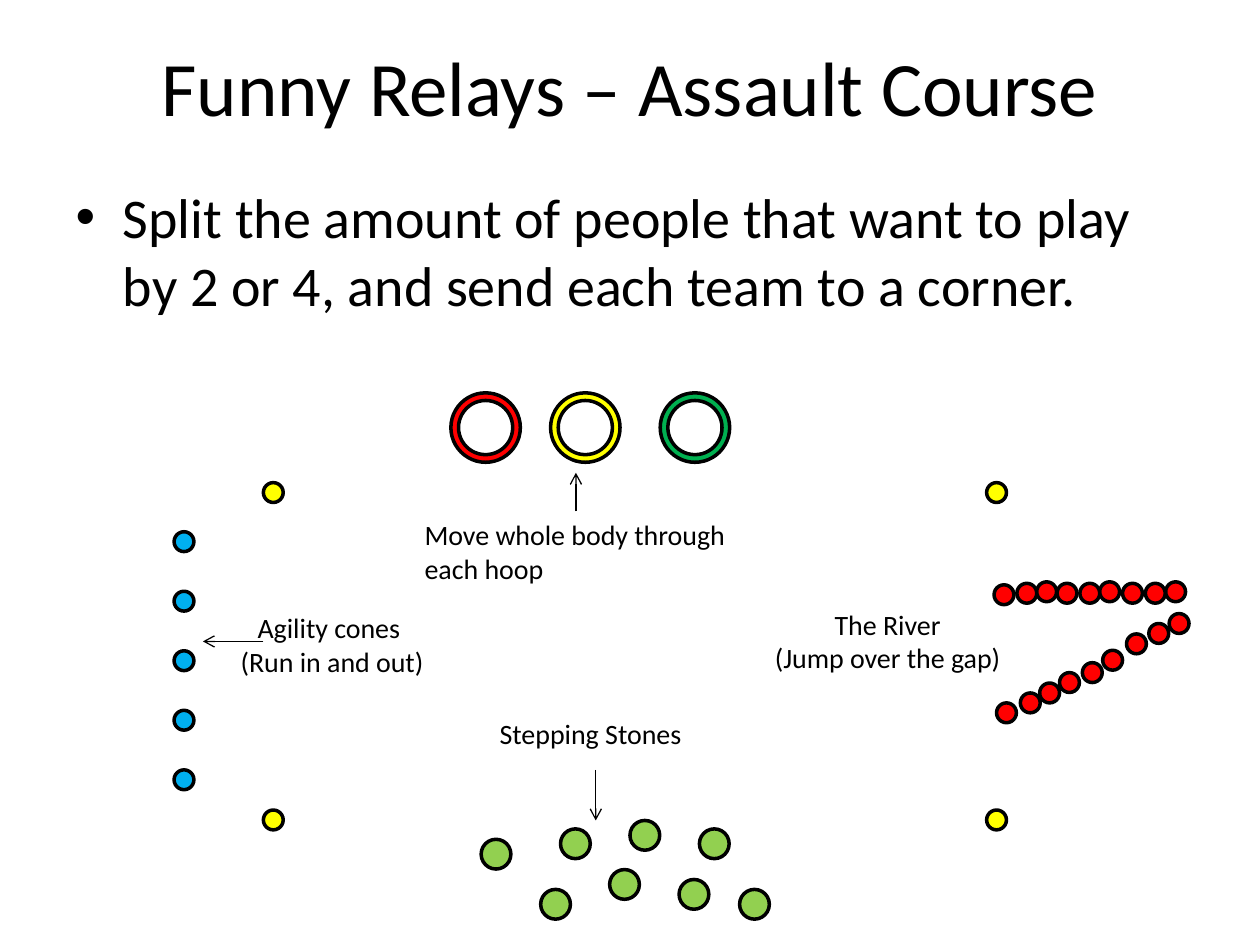
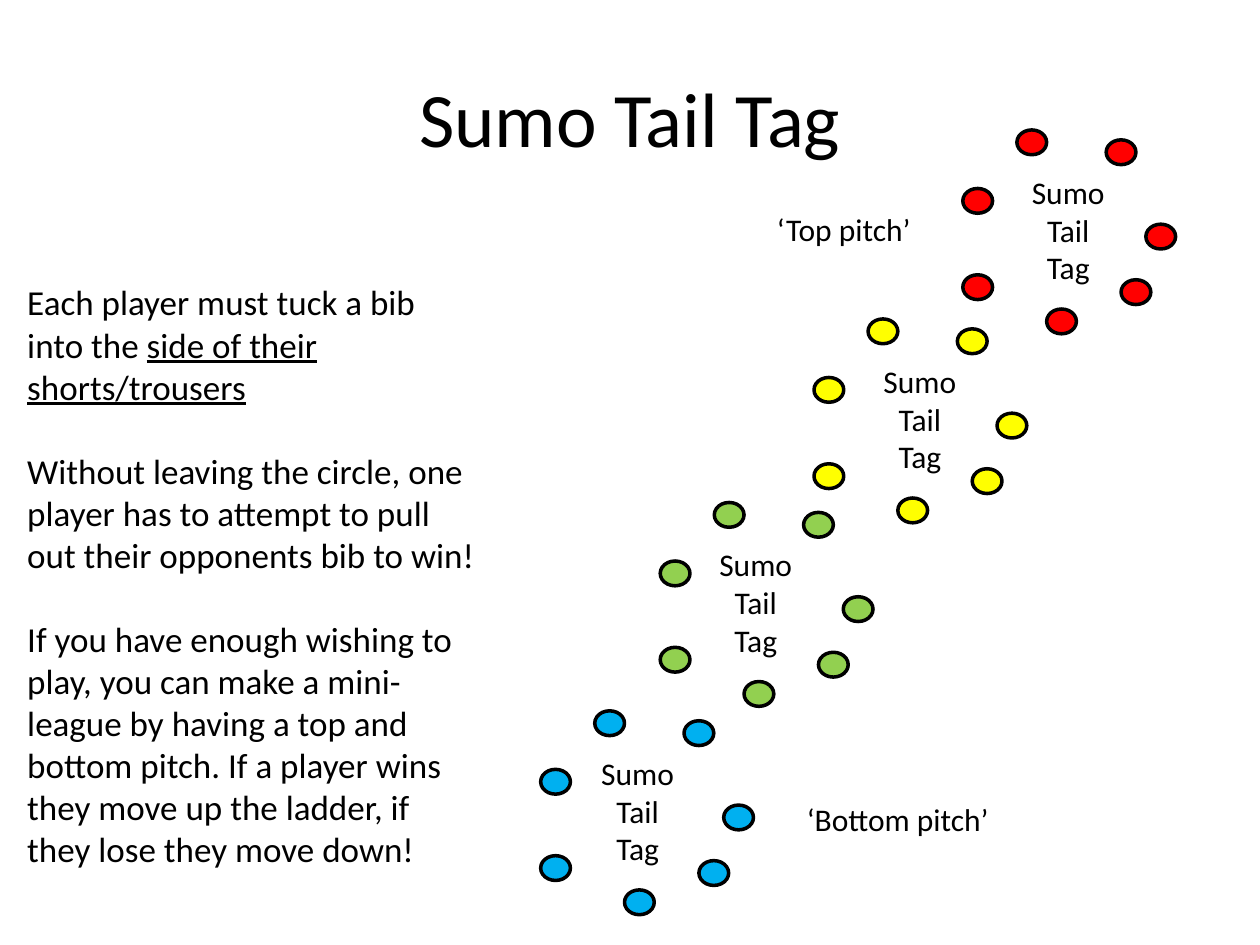
from itertools import product

from lxml import etree
from pptx import Presentation
from pptx.dml.color import RGBColor
from pptx.enum.shapes import MSO_CONNECTOR, MSO_SHAPE
from pptx.enum.text import MSO_ANCHOR, MSO_AUTO_SIZE, PP_ALIGN
from pptx.oxml.ns import qn
from pptx.util import Cm, Pt

BLACK = RGBColor(0x00, 0x00, 0x00)
RED = RGBColor(0xFF, 0x00, 0x00)
YELLOW = RGBColor(0xFF, 0xFF, 0x00)
GREEN = RGBColor(0x00, 0xB0, 0x50)
LIME = RGBColor(0x92, 0xD0, 0x50)
BLUE = RGBColor(0x00, 0xB0, 0xF0)

FONT = "Calibri"
LEFT, CENTER = PP_ALIGN.LEFT, PP_ALIGN.CENTER
OVAL, DONUT = MSO_SHAPE.OVAL, MSO_SHAPE.DONUT
STRAIGHT = MSO_CONNECTOR.STRAIGHT
MIDDLE = MSO_ANCHOR.MIDDLE
GROW = MSO_AUTO_SIZE.SHAPE_TO_FIT_TEXT
TITLE_LAYOUT, CONTENT_LAYOUT = 5, 1

# Assault course: places in cm
COURSE_TITLE = "Funny Relays – Assault Course"
COURSE_INTRO = ("Split the amount of people that want to play by 2 or 4, "
                "and send each team to a corner.")
CONE, STONE, HOOP = 0.4, 0.6, 1.4
CORNERS = list(product((5.31, 19.89), (9.73, 16.33)))
AGILITY_CONES = [(3.51, 10.72 + 1.2 * i) for i in range(5)]
RIVER_TOP = [(20.04, 11.79), (20.5, 11.76), (20.9, 11.73), (21.31, 11.76),
             (21.77, 11.76), (22.17, 11.73), (22.63, 11.76), (23.09, 11.76),
             (23.5, 11.73)]
RIVER_BOTTOM = [(20.09, 14.17), (20.57, 13.97), (20.96, 13.77), (21.36, 13.56),
                (21.82, 13.36), (22.23, 13.11), (22.71, 12.78), (23.16, 12.57),
                (23.57, 12.37)]
HOOPS = [(9.09, RED), (11.1, YELLOW), (13.31, GREEN)]
HOOP_TOP = 7.92
STONES = [(9.7, 16.92), (10.9, 17.93), (11.3, 16.71), (12.29, 17.53),
          (12.7, 16.54), (13.69, 17.73), (14.1, 16.71), (14.91, 17.93)]
STATION_WIDTH = 7.19
STATIONS = [  # left, top, height, lines, alignment
    (8.31, 10.31, 0.94, ["Move whole body through each hoop"], LEFT),
    (8.31, 14.33, 0.94, ["Stepping Stones"], CENTER),
    (3.1, 12.19, 1.62, ["Agility cones ", "(Run in and out)"], CENTER),
    (14.3, 12.12, 1.62, ["The River", "(Jump over the gap)"], CENTER),
]
POINTERS = [((11.61, 10.31), (11.61, 9.53)),
            ((12.01, 15.52), (12.01, 16.54)),
            ((5.31, 12.93), (4.09, 12.93))]

# Tail tag: each pitch repeats one ring of cones
TAG_TITLE = "Sumo Tail Tag"
RING = [(0, 0), (-1.09, 1.18), (-1.09, 2.92), (0.6, 3.61),
        (1.8, 0.2), (2.6, 1.9), (2.1, 3.02)]
PITCHES = [  # first cone left, top, label left, colour
    (20.5, 2.62, 18.59, RED),
    (17.5, 6.43, 15.6, YELLOW),
    (14.4, 10.13, 12.29, LIME),
    (11.99, 14.33, 9.91, BLUE),
]
LABEL_DROP = 0.74
RULES = [  # paragraphs of (words, underlined)
    [("Each player must tuck a bib into the ", False),
     ("side of their shorts/trousers", True)],
    [("Without leaving the circle, one player has to attempt to pull out "
      "their opponents bib to win!", False)],
    [("If you have enough wishing to play, you can make a mini-league by "
      "having a top and bottom pitch. If a player wins they move up the "
      "ladder, if they lose they move down!", False)],
]
PITCH_NAMES = [(15.8, 16.0, "‘Bottom pitch’"), (14.71, 4.11, "‘Top pitch’")]


def place(shape, left, top, width, height):
    shape.left, shape.top = Cm(left), Cm(top)
    shape.width, shape.height = Cm(width), Cm(height)


def style(paragraph, size, align):
    paragraph.alignment = align
    paragraph.font.name = FONT
    paragraph.font.size = Pt(size)
    paragraph.font.color.rgb = BLACK


def add_titled_slide(prs, layout, title, top):
    slide = prs.slides.add_slide(prs.slide_layouts[layout])
    heading = slide.shapes.title
    place(heading, 1.27, top, 22.86, 3.18)
    heading.text_frame.text = title
    heading.text_frame.vertical_anchor = MIDDLE
    style(heading.text_frame.paragraphs[0], 44, CENTER)
    return slide


def add_marker(slide, left, top, width, height, colour, kind=OVAL):
    marker = slide.shapes.add_shape(kind, Cm(left), Cm(top), Cm(width), Cm(height))
    marker.shadow.inherit = False
    marker.fill.solid()
    marker.fill.fore_color.rgb = colour
    marker.line.color.rgb = BLACK
    marker.line.width = Pt(2)
    return marker


def add_text(slide, left, top, width, height, paragraphs, size, align=CENTER, gap=0):
    frame = slide.shapes.add_textbox(Cm(left), Cm(top), Cm(width), Cm(height)).text_frame
    frame.word_wrap = True
    frame.auto_size = GROW
    for i, runs in enumerate(paragraphs):
        paragraph = frame.add_paragraph() if i else frame.paragraphs[0]
        style(paragraph, size, align)
        if i and gap:
            paragraph.space_before = Pt(gap)
        for words, underlined in runs:
            run = paragraph.add_run()
            run.text = words
            if underlined:
                run.font.underline = True


def add_lines(slide, left, top, width, height, lines, size, align=CENTER):
    add_text(slide, left, top, width, height,
             [[(line, False)] for line in lines], size, align)


def add_pointer(slide, start, end):
    pointer = slide.shapes.add_connector(STRAIGHT, *map(Cm, start + end))
    pointer.line.color.rgb = BLACK
    pointer.line.width = Pt(0.75)
    properties = pointer._element.spPr
    etree.SubElement(properties.find(qn("a:ln")), qn("a:tailEnd"), type="arrow")
    etree.SubElement(properties, qn("a:effectLst"))


def build_course(prs):
    slide = add_titled_slide(prs, CONTENT_LAYOUT, COURSE_TITLE, 0.13)
    intro = slide.placeholders[1]
    place(intro, 1.27, 3.56, 22.86, 12.57)
    intro.text_frame.text = COURSE_INTRO
    style(intro.text_frame.paragraphs[0], 32, LEFT)

    # Cones and stepping stones
    for spots, size, colour in [(CORNERS, CONE, YELLOW), (AGILITY_CONES, CONE, BLUE),
                                (RIVER_TOP, CONE, RED), (RIVER_BOTTOM, CONE, RED),
                                (STONES, STONE, LIME)]:
        for left, top in spots:
            add_marker(slide, left, top, size, size, colour)

    # Hoops
    for left, colour in HOOPS:
        hoop = add_marker(slide, left, HOOP_TOP, HOOP, HOOP, colour, DONUT)
        hoop.adjustments[0] = 0.11

    # Station labels and arrows
    for left, top, height, lines, align in STATIONS:
        add_lines(slide, left, top, STATION_WIDTH, height, lines, 16, align)
    for start, end in POINTERS:
        add_pointer(slide, start, end)


def build_tail_tag(prs):
    slide = add_titled_slide(prs, TITLE_LAYOUT, TAG_TITLE, 0.76)

    # Pitches
    for left, top, label_left, colour in PITCHES:
        for dx, dy in RING:
            add_marker(slide, left + dx, top + dy, 0.6, 0.5, colour)
        add_lines(slide, label_left, top + LABEL_DROP, 5.89, 2.57,
                  TAG_TITLE.split(), 18)

    # Rules and pitch names
    add_text(slide, 0.3, 5.54, 9.6, 10.52, RULES, 20, LEFT, gap=24)
    for left, top, name in PITCH_NAMES:
        add_lines(slide, left, top, 4.6, 1.02, [name], 18)


def main():
    prs = Presentation()
    prs.slide_width, prs.slide_height = Cm(25.4), Cm(19.05)
    build_course(prs)
    build_tail_tag(prs)
    prs.save("out.pptx")


if __name__ == "__main__":
    main()
